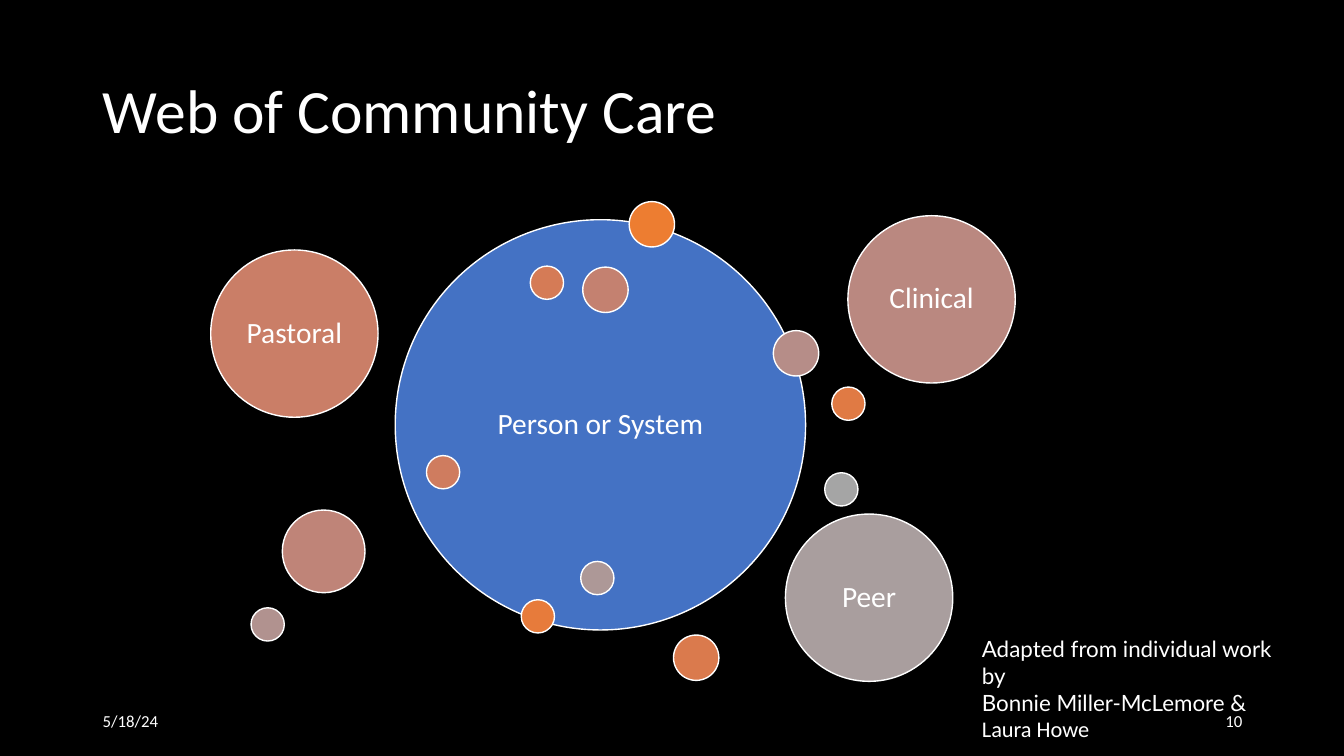
"""Build the "Web of Community Care" slide: circles of care around a person or system."""
from dataclasses import dataclass

import pptx
import pptx.dml.color
import pptx.enum.shapes
import pptx.enum.text
import pptx.util

RGBColor = pptx.dml.color.RGBColor
Align = pptx.enum.text.PP_ALIGN
Anchor = pptx.enum.text.MSO_ANCHOR

PX = 9144
BLACK = RGBColor(0x00, 0x00, 0x00)
WHITE = RGBColor(0xFF, 0xFF, 0xFF)
BLUE = RGBColor(0x44, 0x72, 0xC4)
ORANGE = RGBColor(0xED, 0x7D, 0x31)
ORANGE_2 = RGBColor(0xE7, 0x7B, 0x3B)
ORANGE_3 = RGBColor(0xE0, 0x7A, 0x44)
ORANGE_4 = RGBColor(0xDA, 0x7A, 0x4D)
CORAL = RGBColor(0xD5, 0x7B, 0x56)
CORAL_2 = RGBColor(0xCF, 0x7C, 0x5F)
CORAL_3 = RGBColor(0xCA, 0x7E, 0x67)
ROSE = RGBColor(0xC4, 0x81, 0x70)
ROSE_2 = RGBColor(0xBF, 0x84, 0x78)
ROSE_3 = RGBColor(0xBA, 0x88, 0x80)
MAUVE = RGBColor(0xB6, 0x8D, 0x88)
MAUVE_2 = RGBColor(0xB1, 0x92, 0x8F)
MAUVE_3 = RGBColor(0xAD, 0x98, 0x97)
TAUPE = RGBColor(0xA9, 0x9E, 0x9E)
GRAY = RGBColor(0xA5, 0xA5, 0xA5)

CENTER, LARGE, MEDIUM, SMALL, TINY = 407, 166, 82, 45, 33


@dataclass(frozen=True)
class Circle:
    left: int
    top: int
    size: int
    color: RGBColor
    label: str = ""


@dataclass(frozen=True)
class Note:
    left: int
    top: int
    width: int
    height: int
    lines: tuple[str, ...]
    fonts: tuple[str, ...]
    size: int
    align: Align = Align.LEFT
    anchor: Anchor = Anchor.MIDDLE


CIRCLES = (
    Circle(392, 218, CENTER, BLUE, "Person or System"),
    Circle(624, 200, SMALL, ORANGE),
    Circle(517, 595, TINY, ORANGE_2),
    Circle(825, 384, TINY, ORANGE_3),
    Circle(668, 630, SMALL, ORANGE_4),
    Circle(526, 264, TINY, CORAL),
    Circle(423, 452, TINY, CORAL_2),
    Circle(209, 248, LARGE, CORAL_3, "Pastoral"),
    Circle(578, 265, SMALL, ROSE),
    Circle(280, 506, MEDIUM, ROSE_2),
    Circle(841, 214, LARGE, ROSE_3, "Clinical"),
    Circle(767, 328, SMALL, MAUVE),
    Circle(249, 603, TINY, MAUVE_2),
    Circle(576, 557, TINY, MAUVE_3),
    Circle(779, 510, LARGE, TAUPE, "Peer"),
    Circle(818, 469, TINY, GRAY),
)

NOTES = (
    Note(964, 625, 331, 91,
         ("Adapted from individual work by", "Bonnie Miller-McLemore &", "Laura Howe"),
         ("Lato", "Lato", "Calibri"), 16, anchor=Anchor.TOP),
    Note(92, 695, 300, 40, ("5/18/24",), ("Calibri",), 12),
    Note(942, 695, 300, 40, ("10",), ("Calibri",), 12, Align.RIGHT),
)


def format_paragraph(paragraph, size: int, align: Align, font: str = "Calibri") -> None:
    """Align a paragraph and give its runs white text."""
    paragraph.alignment = align
    for run in paragraph.runs:
        run.font.size = pptx.util.Pt(size)
        run.font.name = font
        run.font.color.rgb = WHITE


def draw_title(slide, text: str) -> None:
    """Place and format the title placeholder."""
    title = slide.shapes.title
    title.left, title.top, title.width, title.height = (
        side * PX for side in (92, 40, 1150, 145))
    title.text_frame.text = text
    title.text_frame.vertical_anchor = Anchor.MIDDLE
    paragraph = title.text_frame.paragraphs[0]
    paragraph.line_spacing = 0.9
    format_paragraph(paragraph, 44, Align.LEFT)


def draw_circle(slide, circle: Circle) -> None:
    """Draw a white-outlined circle with its label, if any."""
    ellipse = slide.shapes.add_shape(
        pptx.enum.shapes.MSO_SHAPE.OVAL,
        circle.left * PX, circle.top * PX, circle.size * PX, circle.size * PX)
    ellipse.shadow.inherit = False
    ellipse.fill.solid()
    ellipse.fill.fore_color.rgb = circle.color
    ellipse.line.color.rgb = WHITE
    ellipse.line.width = pptx.util.Pt(1)
    if circle.label:
        frame = ellipse.text_frame
        frame.text = circle.label
        frame.vertical_anchor = Anchor.MIDDLE
        frame.paragraphs[0].line_spacing = 0.9
        format_paragraph(frame.paragraphs[0], 21, Align.CENTER)


def draw_note(slide, note: Note) -> None:
    """Draw a text box with one paragraph per line."""
    frame = slide.shapes.add_textbox(
        note.left * PX, note.top * PX, note.width * PX, note.height * PX).text_frame
    frame.word_wrap = True
    frame.vertical_anchor = note.anchor
    frame.text = "\n".join(note.lines)
    for paragraph, font in zip(frame.paragraphs, note.fonts):
        format_paragraph(paragraph, note.size, note.align, font)


def main() -> None:
    """Build and save the slide."""
    deck = pptx.Presentation()
    deck.slide_width = pptx.util.Inches(13.33)
    deck.slide_height = pptx.util.Inches(7.5)
    slide = deck.slides.add_slide(deck.slide_layouts.get_by_name("Title Only"))
    slide.background.fill.solid()
    slide.background.fill.fore_color.rgb = BLACK
    draw_title(slide, "Web of Community Care")
    for circle in CIRCLES:
        draw_circle(slide, circle)
    for note in NOTES:
        draw_note(slide, note)
    deck.save("out.pptx")


if __name__ == "__main__":
    main()
